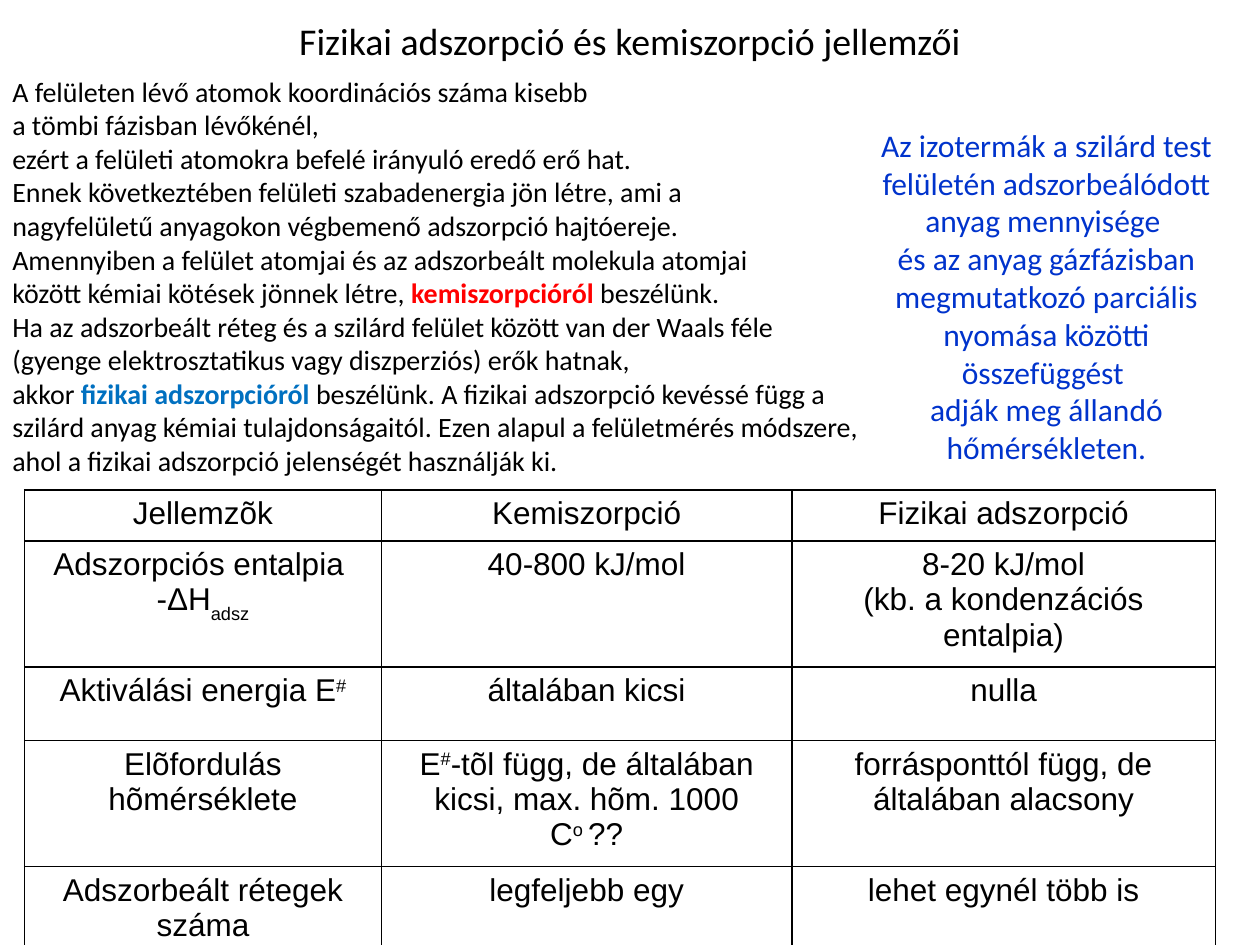
"""Build a slide comparing physical adsorption and chemisorption."""
from dataclasses import dataclass
from typing import Optional

from lxml.etree import SubElement
from pptx import Presentation
from pptx.dml.color import RGBColor
from pptx.enum.text import MSO_ANCHOR, MSO_AUTO_SIZE, PP_ALIGN
from pptx.oxml.ns import qn
from pptx.util import Pt


@dataclass(frozen=True)
class Theme:
    body_font: str = "Calibri"
    table_font: str = "Arial"
    title_size: float = 21.6
    text_size: float = 16
    large_size: float = 18
    black: str = "000000"
    red: str = "FF0000"
    sky: str = "0070C0"
    blue: str = "0033CC"
    border: float = 1


THEME = Theme()


@dataclass(frozen=True)
class Piece:
    text: str
    color: Optional[str] = None
    bold: bool = False
    base: int = 0


@dataclass(frozen=True)
class Style:
    font: str
    size: float
    color: str = THEME.black
    align: PP_ALIGN = PP_ALIGN.CENTER


@dataclass(frozen=True)
class Block:
    left: float
    top: float
    width: float
    height: float
    style: Style
    lines: list
    wrap: bool = True
    grow: bool = True


def sup(text: str) -> Piece:
    return Piece(text, base=30)


def sub(text: str) -> Piece:
    return Piece(text, base=-30)


TABLE_STYLE = Style(THEME.table_font, THEME.large_size)
COLUMNS = (204, 234.5, 242)
ROWS = (29, 72, 42, 72, 49)

BLOCKS = [
    Block(36, 9.5, 648, 27, Style(THEME.body_font, THEME.title_size),
          ["Fizikai adszorpció és kemiszorpció jellemzői"], grow=False),
    Block(0, 37.5, 507, 240,
          Style(THEME.body_font, THEME.text_size, align=PP_ALIGN.LEFT),
          ["A felületen lévő atomok koordinációs száma kisebb",
           "a tömbi fázisban lévőkénél,",
           "ezért a felületi atomokra befelé irányuló eredő erő hat.",
           "Ennek következtében felületi szabadenergia jön létre, ami a",
           "nagyfelületű anyagokon végbemenő adszorpció hajtóereje.",
           "Amennyiben a felület atomjai és az adszorbeált molekula atomjai",
           ["között kémiai kötések jönnek létre, ",
            Piece("kemiszorpcióról ", THEME.red, True), "beszélünk."],
           "Ha az adszorbeált réteg és a szilárd felület között van der Waals féle",
           "(gyenge elektrosztatikus vagy diszperziós) erők hatnak,",
           ["akkor ", Piece("fizikai adszorpcióról ", THEME.sky, True),
            "beszélünk. A fizikai adszorpció kevéssé függ a"],
           "szilárd anyag kémiai tulajdonságaitól. Ezen alapul a felületmérés módszere,",
           "ahol a fizikai adszorpció jelenségét használják ki."], wrap=False),
    Block(484.5, 67, 227, 204,
          Style(THEME.body_font, THEME.large_size, THEME.blue),
          ["Az izotermák a szilárd test felületén adszorbeálódott anyag mennyisége ",
           "és az anyag gázfázisban megmutatkozó parciális nyomása közötti összefüggést ",
           "adják meg állandó hőmérsékleten."]),
]

CELLS = [
    [["Jellemzõk"], ["Kemiszorpció"], ["Fizikai adszorpció"]],
    [["Adszorpciós entalpia ", ["-ΔH", sub("adsz")]], ["40-800 kJ/mol"],
     ["8-20 kJ/mol", "(kb. a kondenzációs entalpia)"]],
    [[["Aktiválási energia E", sup("#")]], ["általában kicsi"], ["nulla"]],
    [["Elõfordulás hõmérséklete"],
     [["E", sup("#"), "-tõl függ, de általában kicsi, max. hõm. 1000 C",
       sup("o "), "??"]],
     ["forrásponttól függ, de általában alacsony"]],
    [["Adszorbeált rétegek száma"], ["legfeljebb egy"], ["lehet egynél több is"]],
]


def write(tf, lines: list, style: Style) -> None:
    for i, line in enumerate(lines):
        p = tf.add_paragraph() if i else tf.paragraphs[0]
        p.alignment = style.align
        for part in [line] if isinstance(line, str) else line:
            piece = Piece(part) if isinstance(part, str) else part
            r = p.add_run()
            r.text = piece.text
            r.font.name = style.font
            r.font.size = Pt(style.size)
            r.font.bold = piece.bold
            r.font.color.rgb = RGBColor.from_string(piece.color or style.color)
            if piece.base:
                r.font._element.set("baseline", str(piece.base * 1000))


def add_block(s, block: Block) -> None:
    sp = s.shapes.add_textbox(Pt(block.left), Pt(block.top),
                              Pt(block.width), Pt(block.height))
    tf = sp.text_frame
    tf.word_wrap = block.wrap
    tf.vertical_anchor = MSO_ANCHOR.MIDDLE
    tf.auto_size = (MSO_AUTO_SIZE.SHAPE_TO_FIT_TEXT if block.grow
                    else MSO_AUTO_SIZE.NONE)
    write(tf, block.lines, block.style)


def set_borders(cell) -> None:
    tc_pr = cell._tc.get_or_add_tcPr()
    for side in ("lnL", "lnR", "lnT", "lnB"):
        ln = SubElement(tc_pr, qn(f"a:{side}"), w=str(Pt(THEME.border)))
        fill = SubElement(ln, qn("a:solidFill"))
        SubElement(fill, qn("a:srgbClr"), val=THEME.black)


def add_comparison(s, left: float, top: float) -> None:
    frame = s.shapes.add_table(len(ROWS), len(COLUMNS), Pt(left), Pt(top),
                               Pt(sum(COLUMNS)), Pt(sum(ROWS)))
    table = frame.table
    table.first_row = table.horz_banding = False
    for column, width in zip(table.columns, COLUMNS):
        column.width = Pt(width)
    for row, height, contents in zip(table.rows, ROWS, CELLS):
        row.height = Pt(height)
        for cell, lines in zip(row.cells, contents):
            set_borders(cell)
            cell.fill.background()
            write(cell.text_frame, lines, TABLE_STYLE)


def main() -> None:
    prs = Presentation()
    prs.slide_width, prs.slide_height = Pt(720), Pt(540)
    s = prs.slides.add_slide(prs.slide_layouts[6])
    for block in BLOCKS:
        add_block(s, block)
    add_comparison(s, 14, 280)
    prs.save("out.pptx")


if __name__ == "__main__":
    main()
